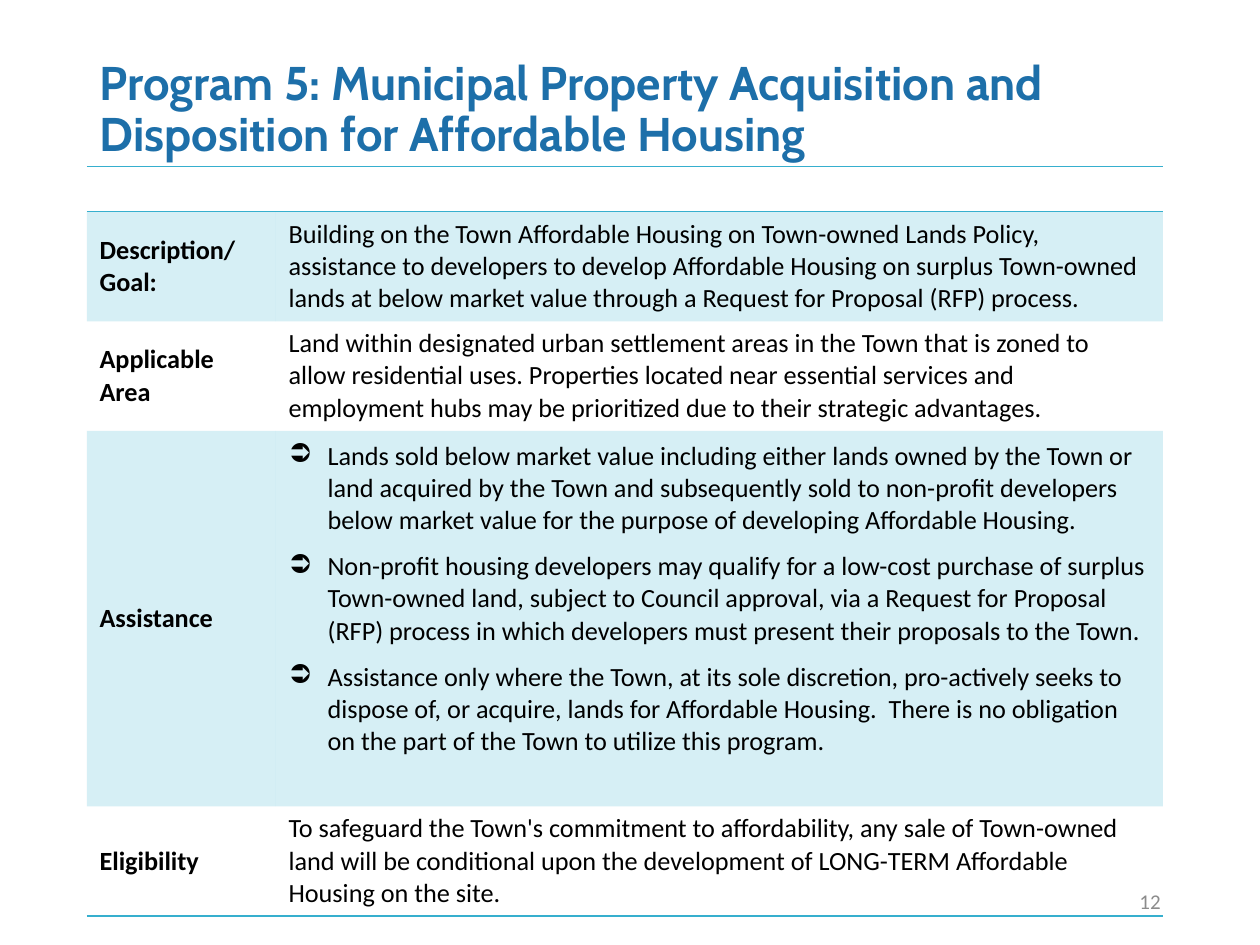
from pptx import Presentation
from pptx.dml.color import RGBColor
from pptx.enum.text import MSO_ANCHOR, PP_ALIGN
from pptx.oxml import parse_xml
from pptx.oxml.ns import nsdecls, qn
from pptx.util import Inches, Pt
from lxml import etree

MIDDLE, RIGHT = MSO_ANCHOR.MIDDLE, PP_ALIGN.RIGHT
TITLE_BLUE, TEAL, BLACK, GREY = "1D6FA9", "36AFCE", "000000", "8C8C8C"
LEFT, TABLE_TOP = 0.69, 1.32
COLUMNS = [1.5, 7.04]
ROWS = [0.36, 0.87, 0.87, 2.98, 0.87]
INDENT = 0.31

CONTENT = [
    ("Description/ Goal:", [
        "Building on the Town Affordable Housing on Town-owned Lands Policy, assistance to developers to develop Affordable Housing on surplus Town-owned lands at below market value through a Request for Proposal (RFP) process."]),
    ("Applicable Area", [
        "Land within designated urban settlement areas in the Town that is zoned to allow residential uses. Properties located near essential services and employment hubs may be prioritized due to their strategic advantages."]),
    ("Assistance", [
        "Lands sold below market value including either lands owned by the Town or land acquired by the Town and subsequently sold to non-profit developers below market value for the purpose of developing Affordable Housing.",
        "Non-profit housing developers may qualify for a low-cost purchase of surplus Town-owned land, subject to Council approval, via a Request for Proposal (RFP) process in which developers must present their proposals to the Town.",
        "Assistance only where the Town, at its sole discretion, pro-actively seeks to dispose of, or acquire, lands for Affordable Housing.  There is no obligation on the part of the Town to utilize this program."]),
    ("Eligibility", [
        "To safeguard the Town's commitment to affordability, any sale of Town-owned land will be conditional upon the development of LONG-TERM Affordable Housing on the site."]),
]


def style(paragraph, size, color, name="Calibri", bold=False):
    for span in paragraph.runs:
        span.font.name, span.font.size, span.font.bold = name, Pt(size), bold
        span.font.color.rgb = RGBColor.from_string(color)


def set_borders(cell, teal_sides):
    properties = cell._tc.get_or_add_tcPr()
    for side in "LRTB":
        paint = (f'<a:solidFill><a:srgbClr val="{TEAL}"/></a:solidFill>'
                 if side in teal_sides else "<a:noFill/>")
        properties.append(parse_xml(
            f'<a:ln{side} {nsdecls("a")} w="{Pt(1)}">{paint}</a:ln{side}>'))


deck = Presentation()
deck.slide_width, deck.slide_height = Inches(10), Inches(7.5)
page = deck.slides.add_slide(deck.slide_layouts[5])

# Title
title = page.shapes.title
title.left, title.top = Inches(LEFT), Inches(0.15)
title.width, title.height = Inches(9.05), Inches(1.45)
title.text_frame.text = "Program 5: Municipal Property Acquisition and Disposition for Affordable Housing"
title.text_frame.vertical_anchor = MIDDLE
heading = title.text_frame.paragraphs[0]
heading.alignment = PP_ALIGN.LEFT
heading.line_spacing = 0.9
style(heading, 27, TITLE_BLUE, "Cabin", True)

# Table grid
table = page.shapes.add_table(
    len(ROWS), len(COLUMNS), Inches(LEFT), Inches(TABLE_TOP),
    Inches(sum(COLUMNS)), Inches(sum(ROWS))).table
table.first_row = table.horz_banding = False
for column, width in zip(table.columns, COLUMNS):
    column.width = Inches(width)
for row, height in zip(table.rows, ROWS):
    row.height = Inches(height)

# Empty band between two rules
for cell in table.rows[0].cells:
    cell.margin_top = cell.margin_bottom = 0
    set_borders(cell, "TB")
    cell.fill.background()

# Program details
for index, (label, details) in enumerate(CONTENT, start=1):
    sides = {1: "T", len(CONTENT): "B"}.get(index, "")
    for cell, texts, bold in zip(table.rows[index].cells, ([label], details), (True, False)):
        cell.vertical_anchor = MIDDLE
        set_borders(cell, sides)
        if index % 2:
            cell.fill.solid()
            cell.fill.fore_color.rgb = RGBColor.from_string(TEAL)
            tint = cell._tc.tcPr.find(qn("a:solidFill")).find(qn("a:srgbClr"))
            etree.SubElement(tint, qn("a:alpha"), val="20000")
        else:
            cell.fill.background()
        cell.text_frame.text = "\n".join(texts)
        for paragraph in cell.text_frame.paragraphs:
            paragraph.space_after = Pt(8)
            if len(texts) > 1:
                cell.margin_bottom = Inches(0.36)
                layout = paragraph._p.get_or_add_pPr()
                layout.set("marL", str(Inches(INDENT)))
                layout.set("indent", str(-Inches(INDENT)))
                etree.SubElement(layout, qn("a:buChar"), char="➲")
            style(paragraph, 15, BLACK, bold=bold)

# Page number
number = page.shapes.add_textbox(Inches(7.06), Inches(6.95), Inches(2.25), Inches(0.4))
number.text_frame.word_wrap = True
number.text_frame.vertical_anchor = MIDDLE
number.text_frame.text = "12"
number.text_frame.paragraphs[0].alignment = RIGHT
style(number.text_frame.paragraphs[0], 12, GREY)

deck.save("out.pptx")
